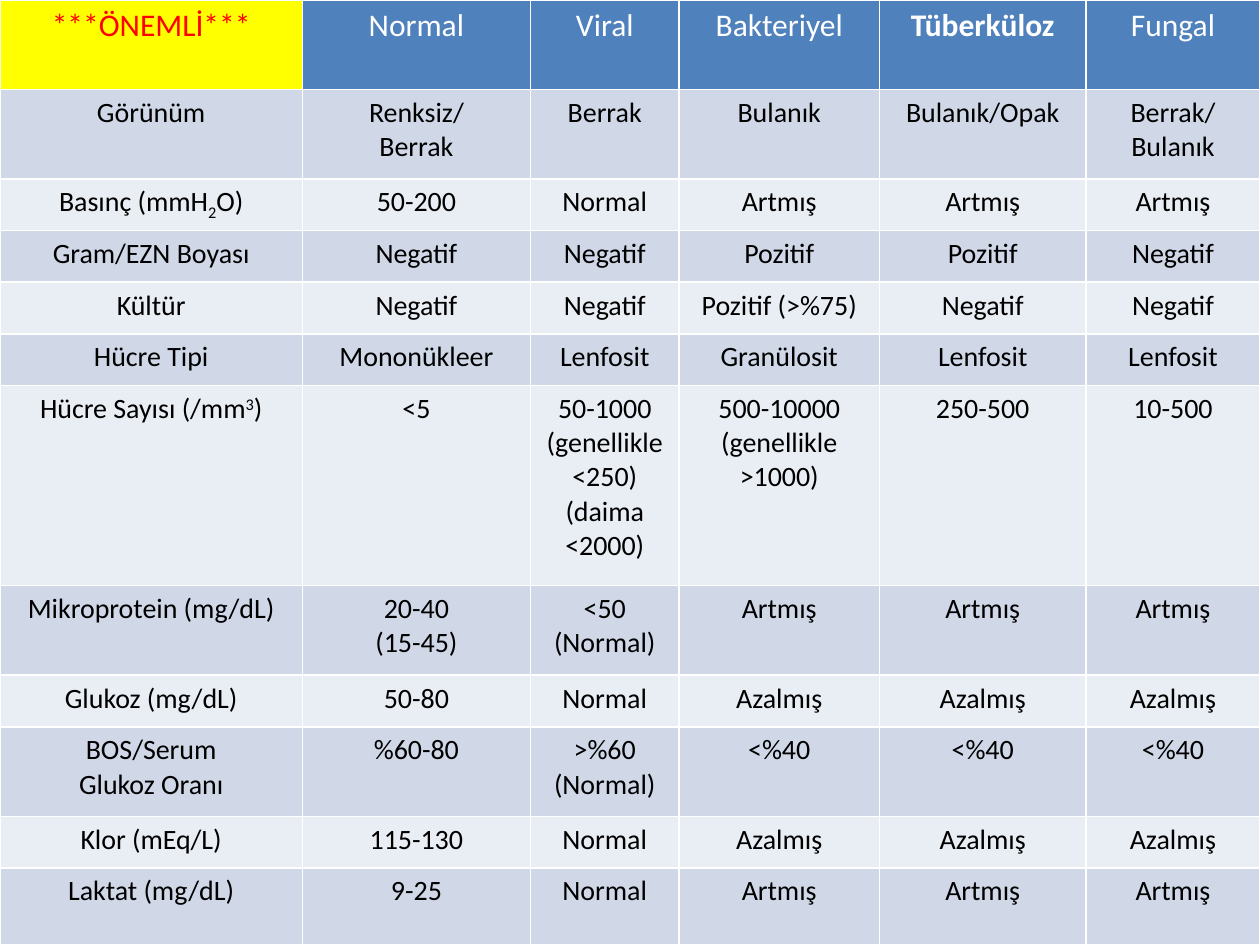
import pptx
import pptx.dml.color
import pptx.enum.text
import pptx.util
from lxml import etree
from pptx.oxml.ns import qn

Inches = pptx.util.Inches
Pt = pptx.util.Pt
RGBColor = pptx.dml.color.RGBColor

WHITE = RGBColor(0xFF, 0xFF, 0xFF)
BLACK = RGBColor(0x00, 0x00, 0x00)
RED = RGBColor(0xFF, 0x00, 0x00)
YELLOW = RGBColor(0xFF, 0xFF, 0x00)
HEADER_BLUE = RGBColor(0x4F, 0x81, 0xBD)
BANDS = (RGBColor(0xE9, 0xED, 0xF4), RGBColor(0xD0, 0xD8, 0xE8))

# Text between two marks is shifted off the baseline, in percent
BASELINE_MARKS = {"~": -25, "^": 30}

COLUMN_WIDTHS = [2.4, 1.81, 1.18, 1.59, 1.64, 1.38]
ROW_HEIGHTS = [0.71, 0.71] + [0.41] * 4 + [1.59, 0.71, 0.41, 0.71, 0.41, 0.61]

HEADERS = ["***ÖNEMLİ***", "Normal", "Viral", "Bakteriyel", "Tüberküloz", "Fungal"]
FINDINGS = [
    ["Görünüm", "Renksiz/\nBerrak", "Berrak", "Bulanık", "Bulanık/Opak", "Berrak/\nBulanık"],
    ["Basınç (mmH~2~O)", "50-200", "Normal", "Artmış", "Artmış", "Artmış"],
    ["Gram/EZN Boyası", "Negatif", "Negatif", "Pozitif", "Pozitif", "Negatif"],
    ["Kültür", "Negatif", "Negatif", "Pozitif (>%75)", "Negatif", "Negatif"],
    ["Hücre Tipi", "Mononükleer", "Lenfosit", "Granülosit", "Lenfosit", "Lenfosit"],
    ["Hücre Sayısı (/mm^3^)", "<5", "50-1000\n(genellikle <250)\n(daima <2000)",
     "500-10000\n(genellikle >1000)", "250-500", "10-500"],
    ["Mikroprotein (mg/dL)", "20-40\n(15-45)", "<50\n(Normal)", "Artmış", "Artmış", "Artmış"],
    ["Glukoz (mg/dL)", "50-80", "Normal", "Azalmış", "Azalmış", "Azalmış"],
    ["BOS/Serum\nGlukoz Oranı", "%60-80", ">%60\n(Normal)", "<%40", "<%40", "<%40"],
    ["Klor (mEq/L)", "115-130", "Normal", "Azalmış", "Azalmış", "Azalmış"],
    ["Laktat (mg/dL)", "9-25", "Normal", "Artmış", "Artmış", "Artmış"],
]


class SlideBuilder:
    """Holds the style and the current slide."""

    font_name = "Calibri"
    border_color = WHITE
    border_width = Pt(1)

    def __init__(self, slide):
        self.slide = slide

    def table(self, left, top, column_widths, row_heights):
        shape = self.slide.shapes.add_table(
            len(row_heights), len(column_widths), Inches(left), Inches(top),
            Inches(sum(column_widths)), Inches(sum(row_heights)))
        table = shape.table
        table.first_row = False
        table.horz_banding = False
        for column, width in zip(table.columns, column_widths):
            column.width = Inches(width)
        for row, height in zip(table.rows, row_heights):
            row.height = Inches(height)
        return table

    def cell(self, cell, text, fill, color, size, bold=False):
        self.borders(cell)
        cell.fill.solid()
        cell.fill.fore_color.rgb = fill
        cell.text_frame.text = text
        for paragraph in cell.text_frame.paragraphs:
            paragraph.alignment = pptx.enum.text.PP_ALIGN.CENTER
            self.shift_baseline(paragraph)
            for run in paragraph.runs:
                run.font.name = self.font_name
                run.font.size = Pt(size)
                run.font.bold = bold
                run.font.color.rgb = color

    def borders(self, cell):
        properties = cell._tc.get_or_add_tcPr()
        for side in ("a:lnL", "a:lnR", "a:lnT", "a:lnB"):
            line = etree.SubElement(properties, qn(side), w=str(self.border_width))
            solid = etree.SubElement(line, qn("a:solidFill"))
            etree.SubElement(solid, qn("a:srgbClr"), val=str(self.border_color))

    def shift_baseline(self, paragraph):
        for mark, percent in BASELINE_MARKS.items():
            if mark not in paragraph.text:
                continue
            parts = paragraph.text.split(mark)
            paragraph.text = parts[0]
            for index, part in enumerate(parts[1:], start=1):
                run = paragraph.add_run()
                run.text = part
                if index % 2:
                    run._r.get_or_add_rPr().set("baseline", str(percent * 1000))


def main():
    presentation = pptx.Presentation()
    presentation.slide_width = Inches(10)
    presentation.slide_height = Inches(7.5)
    builder = SlideBuilder(presentation.slides.add_slide(presentation.slide_layouts[6]))
    table = builder.table(0, 0, COLUMN_WIDTHS, ROW_HEIGHTS)

    # Header row, with a highlighted corner
    for column, text in enumerate(HEADERS):
        fill, color = (HEADER_BLUE, WHITE) if column else (YELLOW, RED)
        builder.cell(table.cell(0, column), text, fill, color, 18, text == "Tüberküloz")

    # Findings in alternating bands
    for row, values in enumerate(FINDINGS, start=1):
        for column, text in enumerate(values):
            builder.cell(table.cell(row, column), text, BANDS[row % 2], BLACK, 16)

    presentation.save("out.pptx")


if __name__ == "__main__":
    main()
